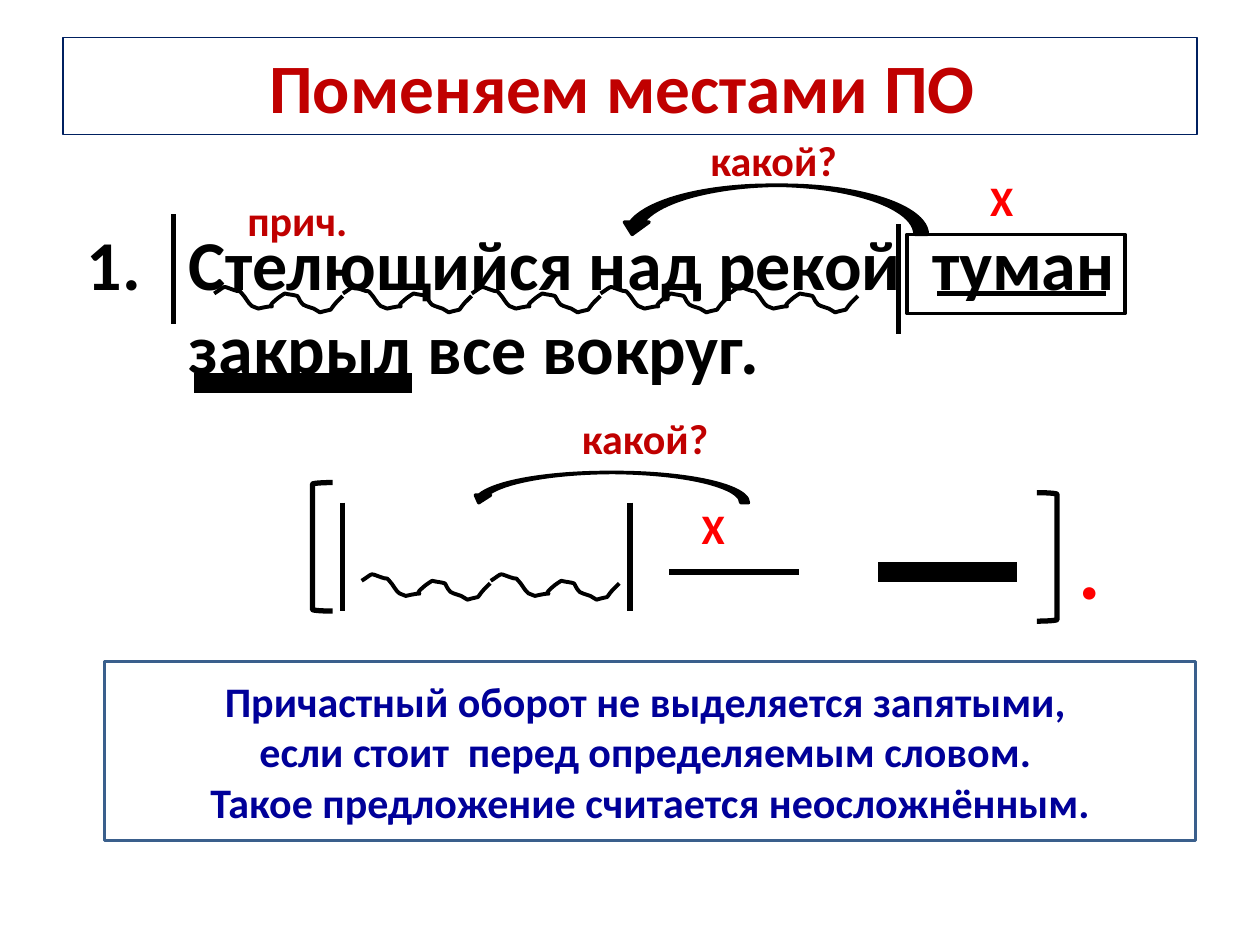
from dataclasses import dataclass
from typing import NamedTuple, Optional

from lxml import etree
from pptx import Presentation
from pptx.dml.color import RGBColor
from pptx.enum import shapes, text
from pptx.oxml import ns
from pptx.util import Inches, Pt


@dataclass(frozen=True)
class Theme:
    font: str = "Calibri"
    ink: str = "000000"
    paper: str = "FFFFFF"
    heading: str = "C00000"
    accent: str = "FF0000"
    rule: str = "000099"
    title_border: str = "002060"
    rule_border: str = "3A5F8C"
    title_size: float = 39.6
    sentence_size: float = 40
    note_size: float = 24
    stop_size: float = 48
    hairline: float = 0.75
    border: float = 2
    wave: float = 2.25
    stroke: float = 3
    predicate: float = 11.75


class Box(NamedTuple):
    left: float
    top: float
    width: float
    height: float

    def lengths(self):
        return [Inches(side) for side in self]


class Panel(NamedTuple):
    lines: list[str]
    box: Box
    color: str
    size: float
    border: str
    weight: float
    fill: Optional[str] = None


class Sentence(NamedTuple):
    wording: str
    box: Box
    hanging: float


class Label(NamedTuple):
    wording: str
    box: Box
    color: str
    size: float


class Stroke(NamedTuple):
    x1: float
    y1: float
    x2: float
    y2: float
    weight: float


class Wave(NamedTuple):
    start: float
    end: float
    top: float
    count: int


class Symbol(NamedTuple):
    kind: shapes.MSO_SHAPE
    box: Box
    weight: float
    filled: bool = False
    flipped: bool = False


THEME = Theme()
MARK = shapes.MSO_SHAPE

PARTS = [
    Panel(["Поменяем местами ПО "], Box(0.5, 0.3, 9, 0.77), THEME.heading,
          THEME.title_size, THEME.title_border, THEME.hairline),
    Sentence("Стелющийся над рекой  туман закрыл все вокруг.", Box(0.59, 1.7, 9, 4.95), 0.81),
    Stroke(7.44, 2.33, 8.78, 2.33, THEME.stroke),
    Stroke(1.54, 3.04, 3.27, 3.04, THEME.predicate),
    Symbol(MARK.RECTANGLE, Box(7.2, 1.86, 1.73, 0.63), THEME.border),
    Label("Х", Box(7.76, 1.31, 0.31, 0.55), THEME.accent, THEME.note_size),
    Label("прич.", Box(1.61, 1.55, 1.5, 0.39), THEME.heading, THEME.note_size),
    Wave(1.7, 6.81, 2.33, 5),
    Stroke(7.13, 1.78, 7.13, 2.65, THEME.stroke),
    Stroke(1.38, 1.7, 1.38, 2.57, THEME.stroke),
    Symbol(MARK.CURVED_DOWN_ARROW, Box(4.92, 1.47, 2.44, 0.39), THEME.border, True, True),
    Label("какой?", Box(5.39, 1.07, 1.5, 0.39), THEME.heading, THEME.note_size),
    Panel(["Причастный оборот не выделяется запятыми, ",
           "если стоит  перед определяемым словом. ",
           "Такое предложение считается неосложнённым."],
          Box(0.83, 5.25, 8.66, 1.42), THEME.rule,
          THEME.note_size, THEME.rule_border, THEME.border, THEME.paper),
    Stroke(5.31, 4.54, 6.34, 4.54, THEME.stroke),
    Wave(2.87, 4.92, 4.61, 2),
    Stroke(5, 3.99, 5, 4.85, THEME.stroke),
    Stroke(2.72, 3.99, 2.72, 4.85, THEME.stroke),
    Symbol(MARK.CURVED_DOWN_ARROW, Box(3.74, 3.75, 2.2, 0.24), THEME.border, True, True),
    Stroke(6.97, 4.54, 8.07, 4.54, THEME.predicate),
    Symbol(MARK.LEFT_BRACKET, Box(2.48, 3.83, 0.16, 1.02), THEME.stroke),
    Symbol(MARK.RIGHT_BRACKET, Box(8.23, 3.91, 0.16, 1.02), THEME.stroke),
    Label("какой?", Box(4.37, 3.28, 1.5, 0.39), THEME.heading, THEME.note_size),
    Label("Х", Box(5.47, 3.91, 0.31, 0.55), THEME.accent, THEME.note_size),
    Label(".", Box(8.46, 4.22, 0.24, 0.55), THEME.accent, THEME.stop_size),
]

WAVE_SEGMENTS = [
    ((0.11, -0.07), (0.05, -0.06), (0.18, -0.02)),
    ((0.2, -0.02), (0.21, -0.02), (0.22, 0)),
    ((0.25, 0.03), (0.27, 0.08), (0.3, 0.1)),
    ((0.35, 0.12),),
    ((0.57, 0.07), (0.37, 0.15), (0.49, 0.05)),
    ((0.51, 0.03), (0.56, 0), (0.56, 0)),
    ((0.6, 0.01), (0.63, 0.01), (0.66, 0.02)),
    ((0.67, 0.03), (0.68, 0.06), (0.69, 0.07)),
    ((0.7, 0.09), (0.71, 0.09), (0.73, 0.1)),
    ((0.75, 0.11), (0.77, 0.11), (0.79, 0.12)),
    ((0.81, 0.13), (0.82, 0.14), (0.84, 0.15)),
    ((0.97, 0.11), (0.89, 0.16), (0.97, 0.07)),
    ((0.98, 0.06), (1.02, 0.02), (1.02, 0.02)),
]


def outline(shape, color: str, weight: float, fill: Optional[str] = None) -> None:
    shape.shadow.inherit = False
    shape.line.color.rgb = RGBColor.from_string(color)
    shape.line.width = Pt(weight)
    if fill:
        shape.fill.solid()
        shape.fill.fore_color.rgb = RGBColor.from_string(fill)
    else:
        shape.fill.background()


def write(frame, lines: list[str], size: float, color: str,
          align=text.PP_ALIGN.CENTER, anchor=text.MSO_ANCHOR.MIDDLE) -> None:
    frame.word_wrap = True
    frame.vertical_anchor = anchor
    frame.text = "\n".join(lines)
    for paragraph in frame.paragraphs:
        paragraph.alignment = align
        paragraph.font.name = THEME.font
        paragraph.font.size = Pt(size)
        paragraph.font.bold = True
        paragraph.font.color.rgb = RGBColor.from_string(color)


def add_panel(slide, panel: Panel) -> None:
    shape = slide.shapes.add_shape(MARK.RECTANGLE, *panel.box.lengths())
    outline(shape, panel.border, panel.weight, panel.fill)
    write(shape.text_frame, panel.lines, panel.size, panel.color)


def add_sentence(slide, sentence: Sentence) -> None:
    frame = slide.shapes.add_textbox(*sentence.box.lengths()).text_frame
    write(frame, [sentence.wording], THEME.sentence_size, THEME.ink,
          text.PP_ALIGN.LEFT, text.MSO_ANCHOR.TOP)
    properties = frame.paragraphs[0]._p.get_or_add_pPr()
    properties.set("marL", str(Inches(sentence.hanging)))
    properties.set("indent", str(-Inches(sentence.hanging)))
    properties.insert(0, etree.Element(ns.qn("a:buAutoNum"), type="arabicPeriod"))


def add_label(slide, label: Label) -> None:
    frame = slide.shapes.add_textbox(*label.box.lengths()).text_frame
    write(frame, [label.wording], label.size, label.color)


def add_stroke(slide, stroke: Stroke) -> None:
    ends = [Inches(value) for value in stroke[:4]]
    line = slide.shapes.add_connector(shapes.MSO_CONNECTOR.STRAIGHT, *ends)
    line.line.color.rgb = RGBColor.from_string(THEME.ink)
    line.line.width = Pt(stroke.weight)
    etree.SubElement(line.element.spPr, ns.qn("a:effectLst"))


def add_symbol(slide, symbol: Symbol) -> None:
    shape = slide.shapes.add_shape(symbol.kind, *symbol.box.lengths())
    outline(shape, THEME.ink, symbol.weight, THEME.ink if symbol.filled else None)
    if symbol.flipped:
        shape.element.spPr.get_or_add_xfrm().set("flipH", "1")


def bend(shape) -> None:
    vertices = iter(list(shape.element.iter(ns.qn("a:lnTo"))))
    for segment in WAVE_SEGMENTS:
        first, *others = [next(vertices) for _ in segment]
        if others:
            first.tag = ns.qn("a:cubicBezTo")
        for vertex in others:
            first.append(vertex[0])
            vertex.getparent().remove(vertex)


def add_wave(slide, wave: Wave) -> None:
    group = slide.shapes.add_group_shape()
    pitch = (wave.end - wave.start) / wave.count
    for index in range(wave.count):
        left = wave.start + index * pitch
        points = [(Inches(left + x), Inches(wave.top + y))
                  for segment in WAVE_SEGMENTS for x, y in segment]
        builder = group.shapes.build_freeform(Inches(left), Inches(wave.top))
        builder.add_line_segments(points, close=False)
        ripple = builder.convert_to_shape()
        outline(ripple, THEME.ink, THEME.wave)
        bend(ripple)


DRAW = {Panel: add_panel, Sentence: add_sentence, Label: add_label,
        Stroke: add_stroke, Symbol: add_symbol, Wave: add_wave}


def main() -> None:
    deck = Presentation()
    deck.slide_width, deck.slide_height = Inches(10), Inches(7.5)
    slide = deck.slides.add_slide(deck.slide_layouts[6])
    for part in PARTS:
        DRAW[type(part)](slide, part)
    deck.save("out.pptx")


if __name__ == "__main__":
    main()
